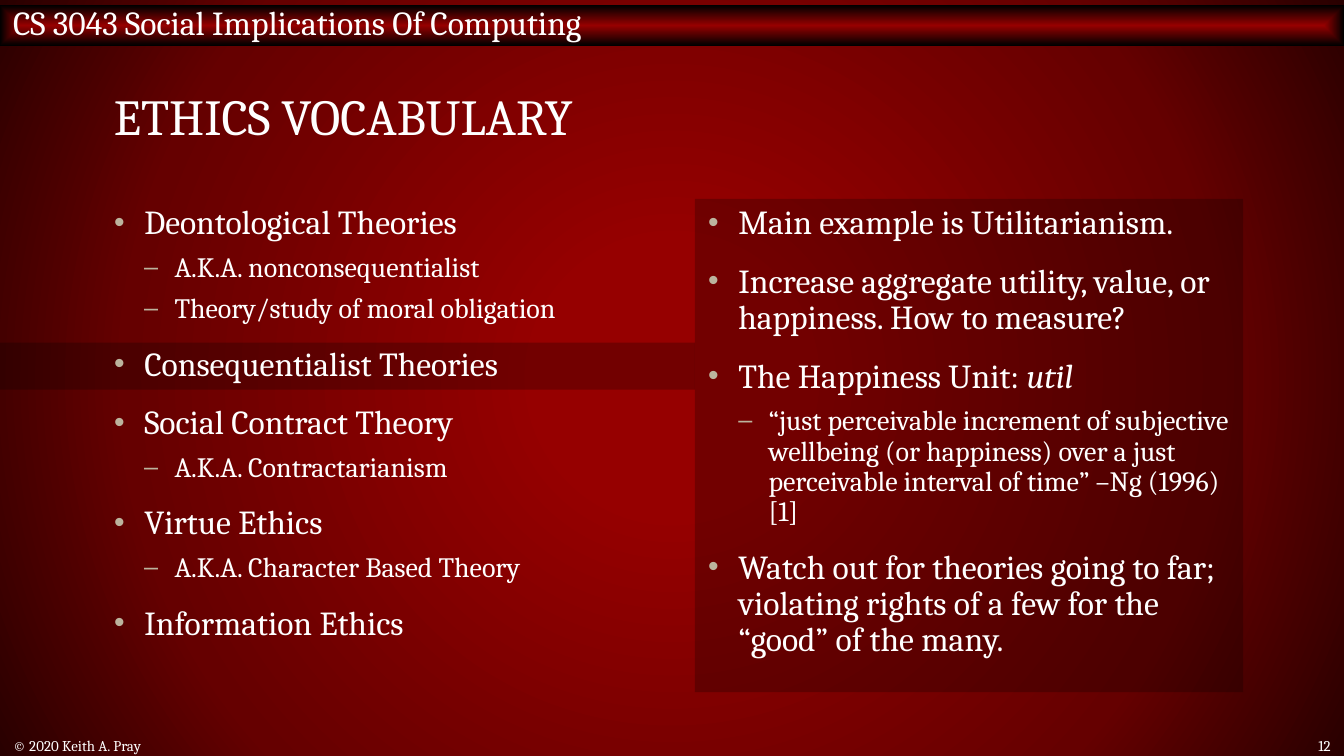
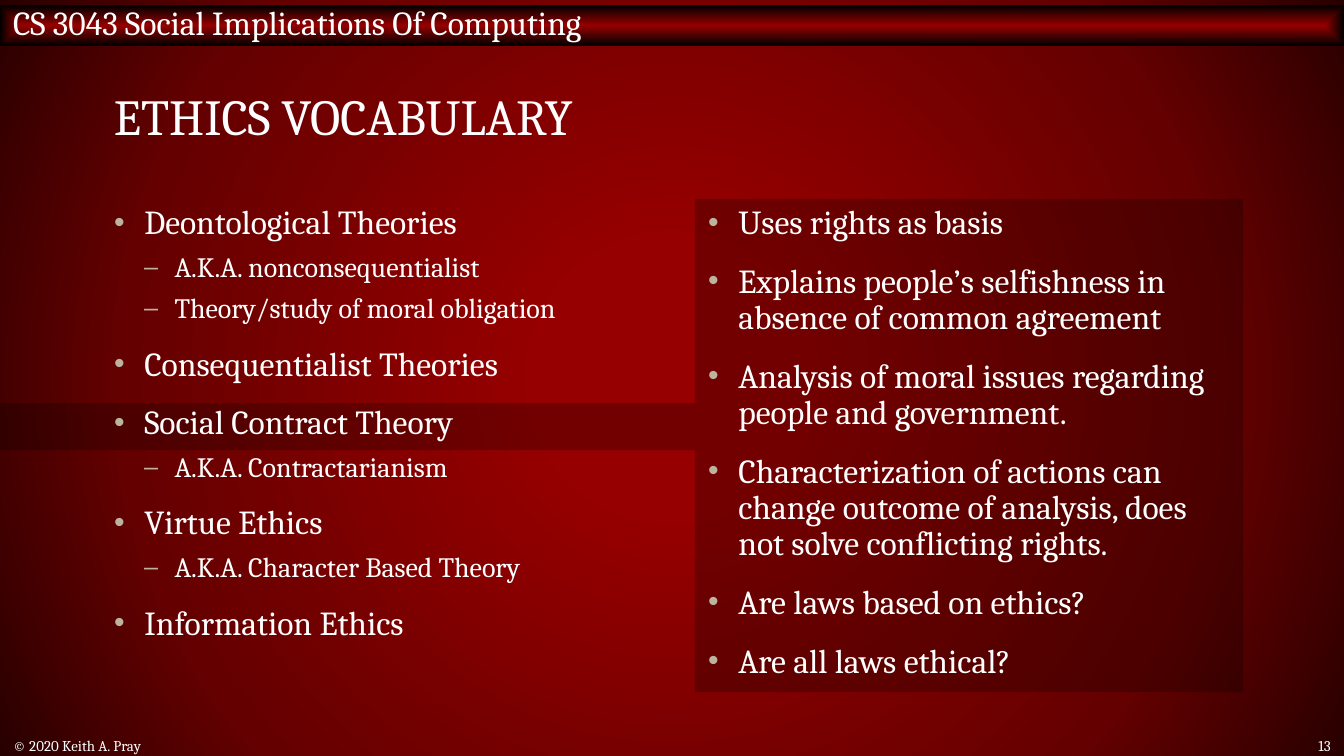
from lxml import etree
from pptx import Presentation
from pptx.dml.color import RGBColor
from pptx.enum.shapes import MSO_SHAPE
from pptx.enum.text import MSO_ANCHOR, PP_ALIGN
from pptx.oxml import parse_xml
from pptx.oxml.ns import nsdecls, qn
from pptx.util import Inches, Pt

RECT = MSO_SHAPE.RECTANGLE
TOP, MIDDLE = MSO_ANCHOR.TOP, MSO_ANCHOR.MIDDLE
LEFT, RIGHT = PP_ALIGN.LEFT, PP_ALIGN.RIGHT

COURSE = "CS 3043 Social Implications Of Computing"
TITLE = "ETHICS VOCABULARY"
COPYRIGHT = "© 2020 Keith A. Pray"

# Each item: level, text, optional italic ending
THEORIES = [
    (0, "Deontological Theories"),
    (1, "A.K.A. nonconsequentialist"),
    (1, "Theory/study of moral obligation"),
    (0, "Consequentialist Theories"),
    (0, "Social Contract Theory"),
    (1, "A.K.A. Contractarianism"),
    (0, "Virtue Ethics"),
    (1, "A.K.A. Character Based Theory"),
    (0, "Information Ethics"),
]
SLIDES = [
    {"number": 12, "highlight_top": 2.55, "details": [
        (0, "Main example is Utilitarianism."),
        (0, "Increase aggregate utility, value, or happiness. How to measure?"),
        (0, "The Happiness Unit: ", "util"),
        (1, "“just perceivable increment of subjective wellbeing (or happiness) "
            "over a just perceivable interval of time” –Ng (1996) [1]"),
        (0, "Watch out for theories going to far; violating rights of a few "
            "for the “good” of the many."),
    ]},
    {"number": 13, "highlight_top": 3.0, "details": [
        (0, "Uses rights as basis"),
        (0, "Explains people’s selfishness in absence of common agreement"),
        (0, "Analysis of moral issues regarding people and government."),
        (0, "Characterization of actions can change outcome of analysis, "
            "does not solve conflicting rights."),
        (0, "Are laws based on ethics?"),
        (0, "Are all laws ethical?"),
    ]},
]

FONT = "Cambria"
COLORS = {"text": "FFFFFF", "bullet": "BCB49E", "shade": "000000",
          "bright": "960000", "mid": "650000", "deep": "290000"}
BACKGROUND = [(17, "bright"), (71, "mid"), (100, "deep")]
BAR = [(0, "bright"), (100, "shade")]
SHADE_ALPHA = 24
LEVELS = [{"size": 18, "before": 12, "char": "•"},
          {"size": 15, "before": 6, "char": "–"}]

W, H = 10, 5.625
MARGIN = 0.75
INDENT = 0.225
COL_W, COL_TOP, COL_H = 4.08, 1.48, 3.67
DETAIL_X = W - MARGIN - COL_W
FOOT_H = 0.16
HIGHLIGHT_H = 0.35


def set_path_gradient(parent, kind, stops):
    """Swap the solid fill of parent for a gradient that spreads from its centre."""
    gs = "".join(f'<a:gs pos="{pos * 1000}"><a:srgbClr val="{COLORS[c]}"/></a:gs>'
                 for pos, c in stops)
    grad = parse_xml(
        f'<a:gradFill {nsdecls("a")} rotWithShape="1"><a:gsLst>{gs}</a:gsLst>'
        f'<a:path path="{kind}"><a:fillToRect l="50000" t="50000" r="50000" b="50000"/>'
        '</a:path></a:gradFill>')
    parent.replace(parent.find(qn("a:solidFill")), grad)


def add_rect(s, x, y, w, h):
    sp = s.shapes.add_shape(RECT, Inches(x), Inches(y), Inches(w), Inches(h))
    sp.shadow.inherit = False
    sp.line.fill.background()
    sp.fill.solid()
    sp.fill.fore_color.rgb = RGBColor.from_string(COLORS["shade"])
    return sp


def add_shade(s, x, y, w, h):
    sp = add_rect(s, x, y, w, h)
    color = sp._element.spPr.find(qn("a:solidFill"))[0]
    etree.SubElement(color, qn("a:alpha"), val=str(SHADE_ALPHA * 1000))


def add_box(s, x, y, w, h):
    return s.shapes.add_textbox(Inches(x), Inches(y), Inches(w), Inches(h))


def set_frame(tf, anchor, top=0.05):
    tf.word_wrap = True
    tf.vertical_anchor = anchor
    tf.margin_left = tf.margin_right = Inches(0.1)
    tf.margin_top, tf.margin_bottom = Inches(top), Inches(0.05)


def style(font, size):
    font.name = FONT
    font.size = Pt(size)
    font.color.rgb = RGBColor.from_string(COLORS["text"])


def set_line(sp, text, size, align=LEFT, top=0.05):
    """Fill a shape with one vertically centred line of text."""
    set_frame(sp.text_frame, MIDDLE, top)
    p = sp.text_frame.paragraphs[0]
    p.text = text
    p.alignment = align
    style(p.runs[0].font, size)
    return p


def add_bullet(p, level):
    pPr = p._p.get_or_add_pPr()
    pPr.set("marL", str(Inches(INDENT * (level + 1))))
    pPr.set("indent", str(-Inches(INDENT)))
    color = etree.SubElement(pPr, qn("a:buClr"))
    etree.SubElement(color, qn("a:srgbClr"), val=COLORS["bullet"])
    etree.SubElement(pPr, qn("a:buSzPct"), val="90000")
    etree.SubElement(pPr, qn("a:buFont"), typeface="Arial")
    etree.SubElement(pPr, qn("a:buChar"), char=LEVELS[level]["char"])


def add_bullets(s, x, items):
    tf = add_box(s, x, COL_TOP, COL_W, COL_H).text_frame
    set_frame(tf, TOP)
    for i, (level, *texts) in enumerate(items):
        p = tf.add_paragraph() if i else tf.paragraphs[0]
        p.level = level
        add_bullet(p, level)
        p.line_spacing = 0.9
        p.space_before = Pt(LEVELS[level]["before"] if i else 0)
        for j, text in enumerate(texts):
            r = p.add_run()
            r.text = text
            style(r.font, LEVELS[level]["size"])
            if j:
                r.font.italic = True


def add_frame(s, number):
    """Add what every slide shares: background, course bar, title and footer."""
    s.background.fill.solid()
    set_path_gradient(s._element.find(".//" + qn("p:bgPr")), "circle", BACKGROUND)
    bar = add_rect(s, 0, 0.04, W, 0.3)
    set_path_gradient(bar._element.spPr, "shape", BAR)
    set_line(bar, COURSE, 18, top=0)
    title = add_box(s, MARGIN, 0.4, W - 2 * MARGIN, 1)
    set_line(title, TITLE, 27).line_spacing = 0.8
    set_line(add_box(s, 0, H - FOOT_H, 6.08, FOOT_H), COPYRIGHT, 8)
    set_line(add_box(s, 9.32, H - FOOT_H, 0.68, FOOT_H), str(number), 8, RIGHT)


def main():
    prs = Presentation()
    prs.slide_width, prs.slide_height = Inches(W), Inches(H)
    for content in SLIDES:
        s = prs.slides.add_slide(prs.slide_layouts[6])
        add_frame(s, content["number"])
        add_shade(s, 0, content["highlight_top"], DETAIL_X, HIGHLIGHT_H)
        add_shade(s, DETAIL_X, COL_TOP, COL_W, COL_H)
        add_bullets(s, MARGIN, THEORIES)
        add_bullets(s, DETAIL_X, content["details"])
    prs.save("out.pptx")


if __name__ == "__main__":
    main()
